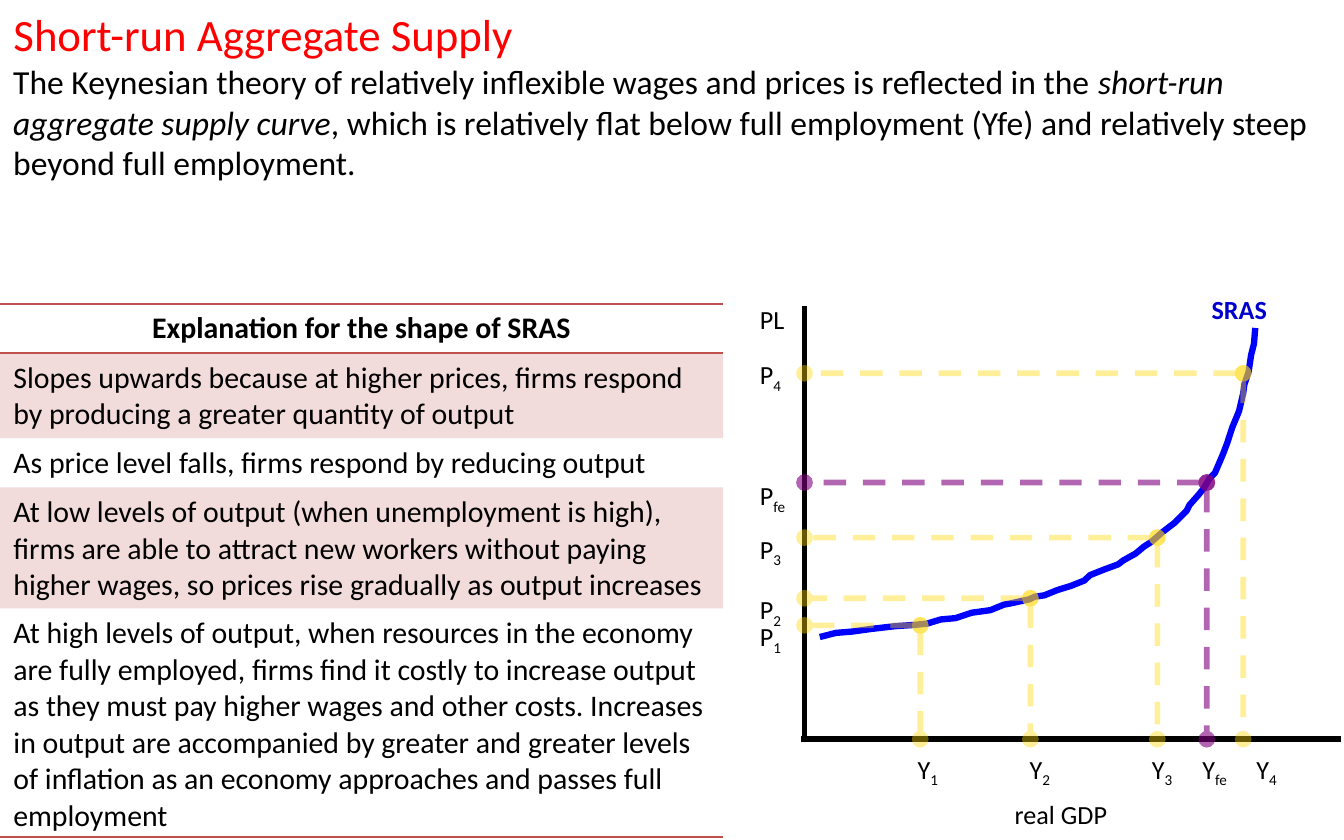
from lxml.etree import SubElement
from pptx import Presentation
from pptx.dml.color import RGBColor
from pptx.enum.dml import MSO_LINE
from pptx.enum.shapes import MSO_CONNECTOR
from pptx.enum.text import MSO_ANCHOR, MSO_AUTO_SIZE, PP_ALIGN
from pptx.oxml import parse_xml
from pptx.oxml.ns import nsdecls, qn
from pptx.util import Pt

COLORS = {"title": "FF0000", "text": "000000", "curve": "0000FF", "sras": "0000CC",
          "guide": "FFD700", "full": "800080", "table": "C0504D"}
FONT = "Calibri"
NO_GRID_STYLE = "{2D5ABB26-0587-4C30-8999-92F81FD0307C}"


def add_runs(tf, runs, size, color="text"):
    """Fill the first paragraph; each run is (text, style), style being b, i, sub or empty."""
    tf.word_wrap = True
    p = tf.paragraphs[0]
    for text, style in runs:
        r = p.add_run()
        r.text = text
        r.font.name = FONT
        r.font.size = Pt(size)
        r.font.color.rgb = RGBColor.from_string(COLORS[color])
        r.font.bold = style == "b"
        r.font.italic = style == "i"
        if style == "sub":
            r.font._element.set("baseline", "-25000")
    return p


def add_line(x1, y1, x2, y2, color="text", opacity=None):
    """Draw a solid line, or a translucent dashed one with oval ends if opacity is given."""
    cx = s.shapes.add_connector(MSO_CONNECTOR.STRAIGHT, Pt(x1), Pt(y1), Pt(x2), Pt(y2))
    cx.line.width = Pt(3)
    cx.line.color.rgb = RGBColor.from_string(COLORS[color])
    if opacity:
        cx.line.dash_style = MSO_LINE.DASH
        ln = cx.line._get_or_add_ln()
        SubElement(ln.find(".//" + qn("a:srgbClr")), qn("a:alpha"), val=str(opacity * 1000))
        for end in ("a:headEnd", "a:tailEnd"):
            SubElement(ln, qn(end), type="oval")
    SubElement(cx._element.spPr, qn("a:effectLst"))


prs = Presentation()
prs.slide_width, prs.slide_height = Pt(720), Pt(450)
s = prs.slides.add_slide(prs.slide_layouts[5])

# Heading and introduction
title = s.shapes.title
title.left, title.top, title.width, title.height = Pt(0), Pt(0), Pt(720), Pt(36)
tf = title.text_frame
tf.auto_size = MSO_AUTO_SIZE.NONE
tf.vertical_anchor = MSO_ANCHOR.TOP
add_runs(tf, [("Short-run Aggregate Supply", "")], 24, "title").alignment = PP_ALIGN.LEFT

intro = s.shapes.add_textbox(Pt(0), Pt(29.3), Pt(720), Pt(72))
add_runs(intro.text_frame, [
    ("The Keynesian theory of relatively inflexible wages and prices is reflected in the ", ""),
    ("short-run aggregate supply curve", "i"),
    (", which is relatively flat below full employment (Yfe) and relatively steep "
     "beyond full employment.", "")], 18)

# Axes
AXIS_X, AXIS_Y = 431, 396
add_line(AXIS_X, 164, AXIS_X, 395)
add_line(429, AXIS_Y, 718.5, AXIS_Y)

# Supply curve
curve = [
    (439.2, 341.3), (447.8, 339.1), (456.5, 338.4), (466.6, 337), (479.5, 335.5),
    (490.3, 334.8), (496.8, 334.1), (504, 331.9), (511.9, 331.2), (520.6, 328.3),
    (530.6, 326.9), (537.8, 324), (541.4, 323.3), (551.5, 321.1), (554.4, 319.7),
    (559.4, 319), (566.6, 316.1), (573.8, 313.9), (581, 311), (583.9, 308.2),
    (591.1, 305.3), (599, 302.4), (601.9, 300.2), (608.4, 296.6), (612.7, 293),
    (617, 290.2), (622.8, 285.1), (629.3, 280.1), (635.8, 273.6), (637.2, 270.7),
    (642.2, 265), (645.1, 261.4), (648, 256.3), (650.9, 253.4), (655.2, 243.4),
    (657.4, 237.6), (660.2, 229), (663.8, 220.3), (666, 211), (666.7, 205.9),
    (668.9, 199.4), (670.3, 190.1), (671.8, 184.3), (672.5, 175.7)]
tenths = [(x * 10, y * 10) for x, y in curve]
fb = s.shapes.build_freeform(*tenths[0], scale=Pt(0.1))
fb.add_line_segments(tenths[1:], close=False)
sp = fb.convert_to_shape()
sp.shadow.inherit = False
sp.fill.background()
sp.line.color.rgb = RGBColor.from_string(COLORS["curve"])
sp.line.width = Pt(3.4)

# Guides from curve points to both axes: subscript, point, P label top, Y label left
guides = [
    ("1", 493, 335, 329, 484.5),
    ("2", 552, 320.5, 314.5, 544.5),
    ("3", 620, 288, 282, 610),
    ("4", 666, 200, 188.5, 666),
    ("fe", 646.5, 258.5, 253.5, 637),
]
labels = [([("PL", "")], 400, 159, 53, "text"),
          ([("SRAS", "b")], 642, 153.5, 58, "sras"),
          ([("real GDP", "")], 536.5, 424, 88.5, "text")]
for sub, x, y, p_top, y_left in guides:
    color, opacity = ("full", 60) if sub == "fe" else ("guide", 40)
    add_line(x, y, x, AXIS_Y, color, opacity)
    add_line(x, y, AXIS_X, y, color, opacity)
    labels.append(([("P", ""), (sub, "sub")], 400, p_top, 38, "text"))
    labels.append(([("Y", ""), (sub, "sub")], y_left, 400, 38, "text"))
for runs, x, y, w, color in labels:
    box = s.shapes.add_textbox(Pt(x), Pt(y), Pt(w), Pt(24.5))
    add_runs(box.text_frame, runs, 14, color)

# Explanation table
rows = [
    (22, "Explanation for the shape of SRAS"),
    (44, "Slopes upwards because at higher prices, firms respond by producing a greater "
         "quantity of output"),
    (22, "As price level falls, firms respond by reducing output"),
    (54, "At low levels of output (when unemployment is high), firms are able to attract new "
         "workers without paying higher wages, so prices rise gradually as output increases"),
    (91, "At high levels of output, when resources in the economy are fully employed, firms "
         "find it costly to increase output as they must pay higher wages and other costs. "
         "Increases in output are accompanied by greater and greater levels of inflation as "
         "an economy approaches and passes full employment"),
]
borders = {0: ("lnB", "lnT"), len(rows) - 1: ("lnB",)}
frame = s.shapes.add_table(len(rows), 1, Pt(0), Pt(162.7), Pt(387.4), Pt(233))
table = frame.table
table.horz_banding = False
table._tbl.tblPr.find(qn("a:tableStyleId")).text = NO_GRID_STYLE
for i, (height, text) in enumerate(rows):
    table.rows[i].height = Pt(height)
    cell = table.cell(i, 0)
    cell.vertical_anchor = MSO_ANCHOR.MIDDLE
    p = add_runs(cell.text_frame, [(text, "" if i else "b")], 16)
    p.alignment = PP_ALIGN.LEFT if i else PP_ALIGN.CENTER
    tcPr = cell._tc.get_or_add_tcPr()
    if i % 2:
        cell.fill.solid()
        cell.fill.fore_color.rgb = RGBColor.from_string(COLORS["table"])
        SubElement(tcPr.find(".//" + qn("a:srgbClr")), qn("a:alpha"), val="20000")
    else:
        cell.fill.background()
    for side in borders.get(i, ()):
        tcPr.insert(0, parse_xml(
            f'<a:{side} {nsdecls("a")} w="{Pt(1)}"><a:solidFill>'
            f'<a:srgbClr val="{COLORS["table"]}"/></a:solidFill></a:{side}>'))

prs.save("out.pptx")
